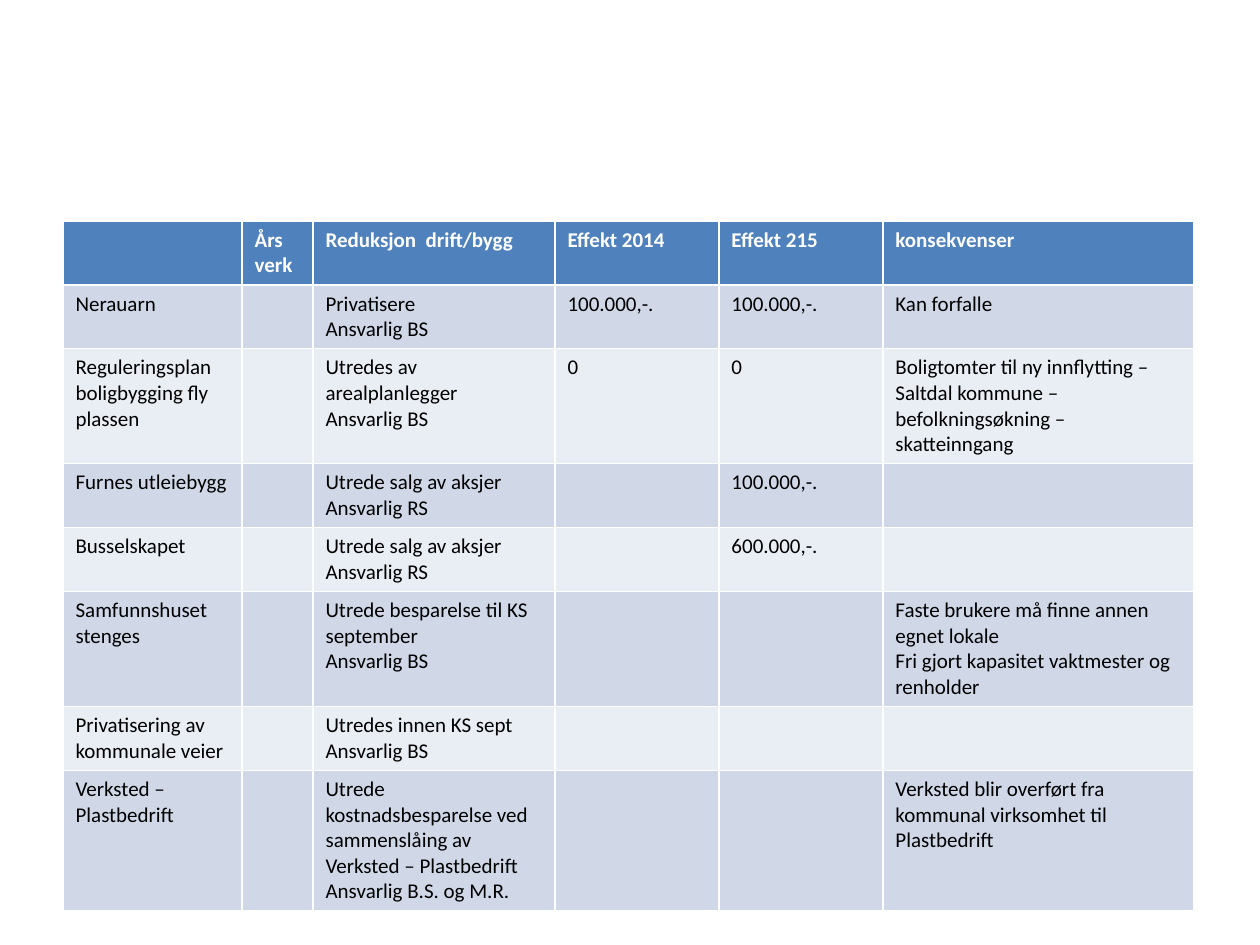
from pptx import Presentation, util as u
from pptx.dml.color import RGBColor

PX = 914400 // 126


def px(n):
    return u.Emu(n * PX)


def paint(color, value):
    """Set a fill or font colour from a hex string."""
    color.rgb = RGBColor.from_string(value)


HEADER, BANDS = "4F81BD", ("E9EDF4", "D0D8E8")
COL_WIDTHS = [179, 71, 242, 164, 164, 311]
ROW_HEIGHT = 52  # minimum; rows grow with their text

ROWS = [
    ["", "Års\nverk", "Reduksjon  drift/bygg", "Effekt 2014", "Effekt 215", "konsekvenser"],
    ["Nerauarn", "", "Privatisere\nAnsvarlig BS", "100.000,-.", "100.000,-.", "Kan forfalle"],
    ["Reguleringsplan boligbygging fly plassen", "",
     "Utredes av arealplanlegger\nAnsvarlig BS", "0", "0",
     "Boligtomter til ny innflytting –  Saltdal kommune – befolkningsøkning – skatteinngang"],
    ["Furnes utleiebygg", "", "Utrede salg av aksjer\nAnsvarlig RS", "", "100.000,-.", ""],
    ["Busselskapet", "", "Utrede salg av aksjer\nAnsvarlig RS", "", "600.000,-.", ""],
    ["Samfunnshuset stenges", "", "Utrede besparelse til KS september\nAnsvarlig BS", "", "",
     "Faste brukere må finne annen egnet lokale\n"
     "Fri gjort kapasitet vaktmester og renholder"],
    ["Privatisering av kommunale veier", "", "Utredes innen KS sept\nAnsvarlig BS", "", "", ""],
    ["Verksted – Plastbedrift", "",
     "Utrede kostnadsbesparelse ved sammenslåing av Verksted – Plastbedrift\n"
     "Ansvarlig B.S. og M.R.", "", "",
     "Verksted blir overført fra kommunal virksomhet til Plastbedrift"],
]

prs = Presentation()
prs.slide_width, prs.slide_height = u.Inches(10), u.Inches(7.5)
s = prs.slides.add_slide(prs.slide_layouts[6])

# The default table style supplies the white borders and the thick header rule.
table = s.shapes.add_table(len(ROWS), len(COL_WIDTHS), px(63), px(221),
                           px(sum(COL_WIDTHS)), px(ROW_HEIGHT * len(ROWS))).table
for col, width in zip(table.columns, COL_WIDTHS):
    col.width = px(width)

for i, row in enumerate(ROWS):
    for j, value in enumerate(row):
        cell = table.cell(i, j)
        cell.fill.solid()
        paint(cell.fill.fore_color, BANDS[i % 2] if i else HEADER)
        if not value:
            continue
        cell.text_frame.text = value
        for p in cell.text_frame.paragraphs:
            for r in p.runs:
                r.font.name, r.font.size, r.font.bold = "Calibri", u.Pt(12), i == 0
                paint(r.font.color, "000000" if i else "FFFFFF")

prs.save("out.pptx")
